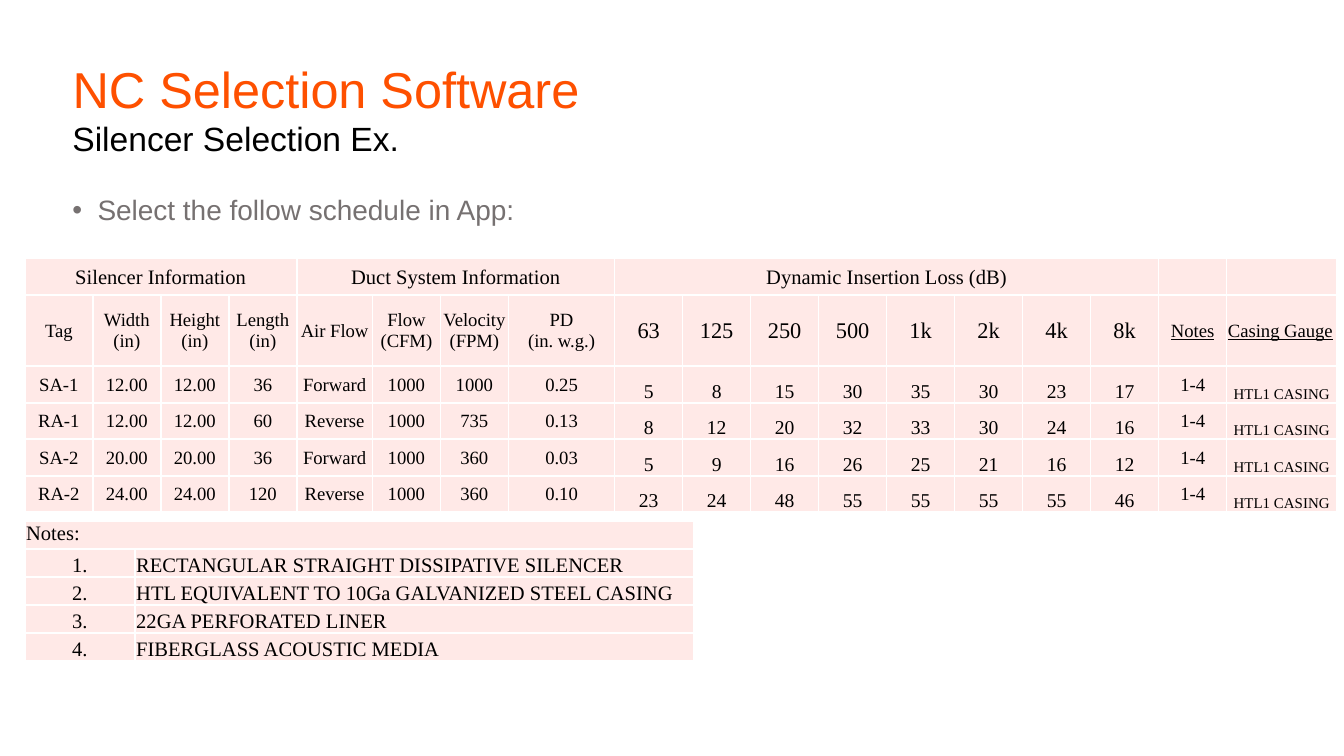
from lxml.etree import SubElement
from pptx import Presentation
from pptx.dml.color import RGBColor
from pptx.enum.text import MSO_ANCHOR as ANCHOR, PP_ALIGN as ALIGN
from pptx.oxml.ns import qn
from pptx.util import Pt

THEME = {
    "orange": "FE5000", "black": "000000", "grey": "767171", "pink": "FFE9E7", "white": "FFFFFF",
    "sans": "Arial", "serif": "Times New Roman",
    "title": 27, "subtitle": 18, "bullet": 15,
    "group": 11, "label": 10, "band": 12, "loss": 10.5, "casing": 8,
}

# Content
TITLE = "NC Selection Software"
SUBTITLE = "Silencer Selection Ex."
BULLET = "Select the follow schedule in App:"
GROUPS = [("Silencer Information", 4), ("Duct System Information", 4),
          ("Dynamic Insertion Loss (dB)", 8), ("", 1), ("", 1)]
LABELS = ["Tag", "Width (in)", "Height (in)", "Length (in)", "Air Flow", "Flow (CFM)",
          "Velocity (FPM)", "PD\n(in. w.g.)"]
BANDS = ["63", "125", "250", "500", "1k", "2k", "4k", "8k"]
LAST_LABELS = ["Notes", "Casing Gauge"]
UNITS = [
    (["SA-1", "12.00", "12.00", "36", "Forward", "1000", "1000", "0.25"],
     [5, 8, 15, 30, 35, 30, 23, 17]),
    (["RA-1", "12.00", "12.00", "60", "Reverse", "1000", "735", "0.13"],
     [8, 12, 20, 32, 33, 30, 24, 16]),
    (["SA-2", "20.00", "20.00", "36", "Forward", "1000", "360", "0.03"],
     [5, 9, 16, 26, 25, 21, 16, 12]),
    (["RA-2", "24.00", "24.00", "120", "Reverse", "1000", "360", "0.10"],
     [23, 24, 48, 55, 55, 55, 55, 46]),
]
UNIT_NOTES, UNIT_CASING = "1-4", "HTL1 CASING"
NOTES = ["RECTANGULAR STRAIGHT DISSIPATIVE SILENCER",
         "HTL EQUIVALENT TO 10Ga GALVANIZED STEEL CASING",
         "22GA PERFORATED LINER", "FIBERGLASS ACOUSTIC MEDIA"]

# Layout
LEFT, TEXT_LEFT = 13.3, 31.7
COL = 36.45
SCHEDULE_COLS = [COL] * 4 + [40.5, COL, COL, 57] + [COL] * 9 + [59]
SCHEDULE_ROWS = [19.5, 38, 19.8, 19.4, 19.8, 19.4]
NOTE_COLS, NOTE_ROWS = [59, 299.5], [15] * (len(NOTES) + 1)


def write(tf, text, size, color="black", font="sans", align=ALIGN.LEFT, spacing=None,
          underline=False, bullet=None):
    for i, line in enumerate(text.split("\n")):
        p = tf.paragraphs[0] if i == 0 else tf.add_paragraph()
        p.alignment = align
        if spacing:
            p.line_spacing = spacing
        if bullet:
            pPr = p._p.get_or_add_pPr()
            pPr.set("marL", str(Pt(13.5)))
            pPr.set("indent", str(-Pt(13.5)))
            SubElement(pPr, qn("a:buFont"), typeface=THEME["sans"])
            SubElement(pPr, qn("a:buChar"), char=bullet)
        if not line:
            SubElement(p._p, qn("a:endParaRPr"), sz=str(int(THEME[size] * 100)))
            continue
        r = p.add_run()
        r.text = line
        r.font.size = Pt(THEME[size])
        r.font.name = THEME[font]
        r.font.color.rgb = RGBColor.from_string(THEME[color])
        r.font.underline = underline


def add_text(slide, box, text, **fmt):
    tf = slide.shapes.add_textbox(*map(Pt, box)).text_frame
    tf.word_wrap = True
    write(tf, text, **fmt)


def add_table(slide, top, cols, rows):
    frame = slide.shapes.add_table(len(rows), len(cols), Pt(LEFT), Pt(top),
                                   Pt(sum(cols)), Pt(sum(rows)))
    table = frame.table
    table.first_row = table.horz_banding = False
    for col, width in zip(table.columns, cols):
        col.width = Pt(width)
    for row, height in zip(table.rows, rows):
        row.height = Pt(height)
    for cell in table.iter_cells():
        cell.margin_left = cell.margin_right = cell.margin_top = Pt(0.7)
        cell.margin_bottom = 0
        for side in ("lnL", "lnR", "lnT", "lnB"):
            ln = SubElement(cell._tc.get_or_add_tcPr(), qn("a:" + side), w=str(Pt(1)))
            SubElement(SubElement(ln, qn("a:solidFill")), qn("a:srgbClr"), val=THEME["white"])
        cell.fill.solid()
        cell.fill.fore_color.rgb = RGBColor.from_string(THEME["pink"])
    return table


def fill_cell(cell, text, size, anchor=ANCHOR.MIDDLE, align=ALIGN.CENTER, **fmt):
    cell.vertical_anchor = anchor
    write(cell.text_frame, text, size, font="serif", align=align, **fmt)


prs = Presentation()
prs.slide_width, prs.slide_height = Pt(720), Pt(405)
slide = prs.slides.add_slide(prs.slide_layouts[5])

# Title, subtitle and bullet
title = slide.shapes.title
title.left, title.top, title.width, title.height = map(Pt, (TEXT_LEFT, 21.6, 620.6, 46))
title.text_frame.vertical_anchor = ANCHOR.BOTTOM
write(title.text_frame, TITLE, "title", color="orange", spacing=0.9)
add_text(slide, (TEXT_LEFT, 101.5, 620.6, 257), BULLET,
         size="bullet", color="grey", spacing=0.9, bullet="•")
add_text(slide, (TEXT_LEFT, 62, 507.6, 29.5), SUBTITLE, size="subtitle", spacing=0.9)

# Silencer schedule: group heads, column heads, then one row per unit
schedule = add_table(slide, 138.5, SCHEDULE_COLS, SCHEDULE_ROWS)
col = 0
for text, span in GROUPS:
    cell = schedule.cell(0, col)
    if span > 1:
        cell.merge(schedule.cell(0, col + span - 1))
    fill_cell(cell, text, "group")
    col += span

for col, text in enumerate(LABELS + BANDS + LAST_LABELS):
    fill_cell(schedule.cell(1, col), text, "band" if text in BANDS else "label",
              align=ALIGN.LEFT if text == "Casing Gauge" else ALIGN.CENTER,
              underline=text in LAST_LABELS)

for row, (data, losses) in enumerate(UNITS, 2):
    styled = ([(text, "label", ANCHOR.MIDDLE) for text in data]
              + [(str(loss), "loss", ANCHOR.BOTTOM) for loss in losses]
              + [(UNIT_NOTES, "label", ANCHOR.MIDDLE), (UNIT_CASING, "casing", ANCHOR.BOTTOM)])
    for col, (text, size, anchor) in enumerate(styled):
        fill_cell(schedule.cell(row, col), text, size, anchor=anchor)

# Numbered notes
notes = add_table(slide, 279, NOTE_COLS, NOTE_ROWS)
notes.cell(0, 0).merge(notes.cell(0, 1))
fill_cell(notes.cell(0, 0), "Notes:", "group", anchor=ANCHOR.TOP, align=ALIGN.LEFT)
for n, text in enumerate(NOTES, 1):
    fill_cell(notes.cell(n, 0), f"{n}.", "group", anchor=ANCHOR.BOTTOM)
    fill_cell(notes.cell(n, 1), text, "group", anchor=ANCHOR.BOTTOM, align=ALIGN.LEFT)

prs.save("out.pptx")
